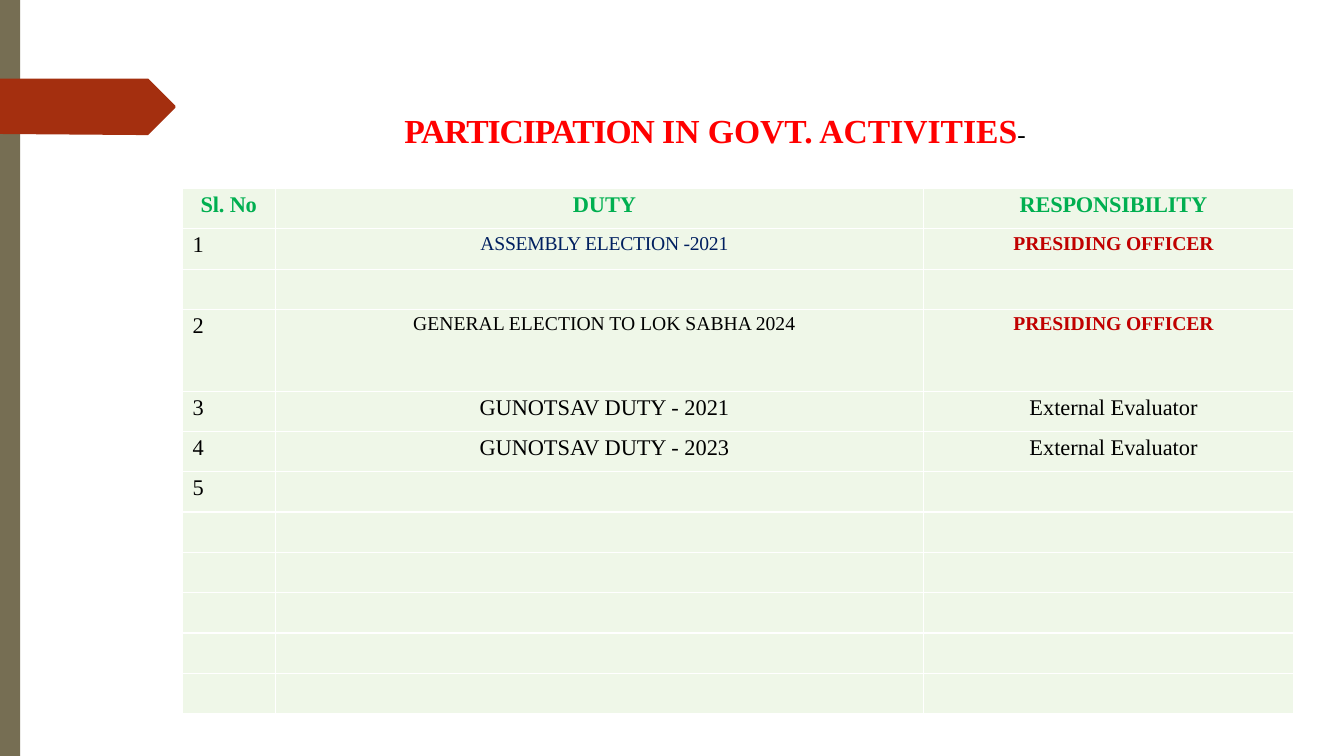
from lxml import etree
from pptx import Presentation
from pptx.dml.color import RGBColor
from pptx.enum import shapes, text
from pptx.oxml.ns import qn
from pptx.util import Inches, Pt

OLIVE = RGBColor(0x76, 0x6E, 0x53)
RUST = RGBColor(0xA4, 0x2F, 0x0F)
RED = RGBColor(0xFF, 0x00, 0x00)
DARK_RED = RGBColor(0xC0, 0x00, 0x00)
GREEN = RGBColor(0x00, 0xAF, 0x50)
NAVY = RGBColor(0x00, 0x1F, 0x5F)
BLACK = RGBColor(0x00, 0x00, 0x00)
PALE_GREEN = RGBColor(0xEF, 0xF7, 0xE8)


def add_run(paragraph, words, size, color, bold=False, spacing=0):
    run = paragraph.add_run()
    run.text = words
    for name, value in {"name": "Times New Roman", "size": Pt(size), "bold": bold}.items():
        setattr(run.font, name, value)
    run.font.color.rgb = color
    if spacing:
        run.font._element.set("spc", str(round(spacing * 100)))


def add_white_borders(cell):
    properties = cell._tc.get_or_add_tcPr()
    for position, side in enumerate(("lnL", "lnR", "lnT", "lnB")):
        line = etree.Element(qn("a:" + side), w=str(Pt(1)))
        fill = etree.SubElement(line, qn("a:solidFill"))
        etree.SubElement(fill, qn("a:srgbClr"), val="FFFFFF")
        properties.insert(position, line)


prs = Presentation()
prs.slide_width, prs.slide_height = Inches(13.33), Inches(7.5)
slide = prs.slides.add_slide(prs.slide_layouts[5])

# Side bar and pointed tab
side_bar = slide.shapes.add_shape(shapes.MSO_SHAPE.RECTANGLE, 0, 0, Inches(0.2), Inches(7.5))
tab_outline = [(Inches(x), Inches(y)) for x, y in (
    (0, 0.78), (0, 1.33), (1.36, 1.34), (1.47, 1.34), (1.48, 1.33), (1.73, 1.08),
    (1.74, 1.07), (1.74, 1.05), (1.73, 1.04), (1.48, 0.79), (1.47, 0.78))]
tab_builder = slide.shapes.build_freeform(*tab_outline[0])
tab_builder.add_line_segments(tab_outline[1:], close=True)
tab = tab_builder.convert_to_shape()
for decoration, color in ((side_bar, OLIVE), (tab, RUST)):
    decoration.fill.solid()
    decoration.fill.fore_color.rgb = color
    decoration.line.fill.background()
    decoration.shadow.inherit = False

# Title
title = slide.shapes.title
title.left, title.top, title.width, title.height = map(Inches, (4, 1.08, 6.83, 0.42))
title_format = {
    "margin_left": Inches(0.01), "margin_top": Inches(0.01), "margin_right": 0,
    "margin_bottom": 0, "word_wrap": True, "auto_size": text.MSO_AUTO_SIZE.NONE,
    "vertical_anchor": text.MSO_ANCHOR.TOP}
for name, value in title_format.items():
    setattr(title.text_frame, name, value)
heading = title.text_frame.paragraphs[0]
heading.alignment = text.PP_ALIGN.LEFT
add_run(heading, "PARTICIPATION ", 24, RED, True, -0.8)
add_run(heading, "IN GOVT. ACTIVITIES", 24, RED, True)
add_run(heading, "-", 18, BLACK, False, -0.1)

# Duties: each cell is a text with size, colour, bold and letter spacing
officer = ("PRESIDING OFFICER", 14, DARK_RED, True, -0.1)
evaluator = ("External Evaluator", 16, BLACK)
duties = [
    (("Sl. No", 16, GREEN, True, -0.1), ("DUTY", 16, GREEN, True),
     ("RESPONSIBILITY", 16, GREEN, True, -0.1)),
    (("1", 16, BLACK), ("ASSEMBLY ELECTION -2021", 14, NAVY, False, -0.2), officer),
    (),
    (("2", 16, BLACK), ("GENERAL ELECTION TO LOK SABHA 2024", 14, BLACK), officer),
    (("3", 16, BLACK), ("GUNOTSAV DUTY - 2021", 16, BLACK), evaluator),
    (("4", 16, BLACK), ("GUNOTSAV DUTY - 2023", 16, BLACK), evaluator),
    (("5", 16, BLACK),),
]
ROW_COUNT, TALL_ROW = 12, 3
column_widths = (0.92, 6.43, 3.67)
table = slide.shapes.add_table(ROW_COUNT, len(column_widths), Inches(1.81), Inches(1.87),
                               Inches(sum(column_widths)), Inches(5.21)).table
table.first_row = table.horz_banding = False
for column, width in zip(table.columns, column_widths):
    column.width = Inches(width)
for index, row in enumerate(table.rows):
    row.height = Inches(0.81 if index == TALL_ROW else 0.4)
    for cell in row.cells:
        cell.margin_left, cell.margin_top = Inches(0.1), Inches(0.04)
        cell.margin_right = cell.margin_bottom = 0
        cell.fill.solid()
        cell.fill.fore_color.rgb = PALE_GREEN
        add_white_borders(cell)
table.cell(0, 0).margin_left = Inches(0.18)

for row_index, duty in enumerate(duties):
    for column_index, entry in enumerate(duty):
        paragraph = table.cell(row_index, column_index).text_frame.paragraphs[0]
        paragraph.alignment = text.PP_ALIGN.CENTER if column_index else text.PP_ALIGN.LEFT
        add_run(paragraph, *entry)

prs.save("out.pptx")
